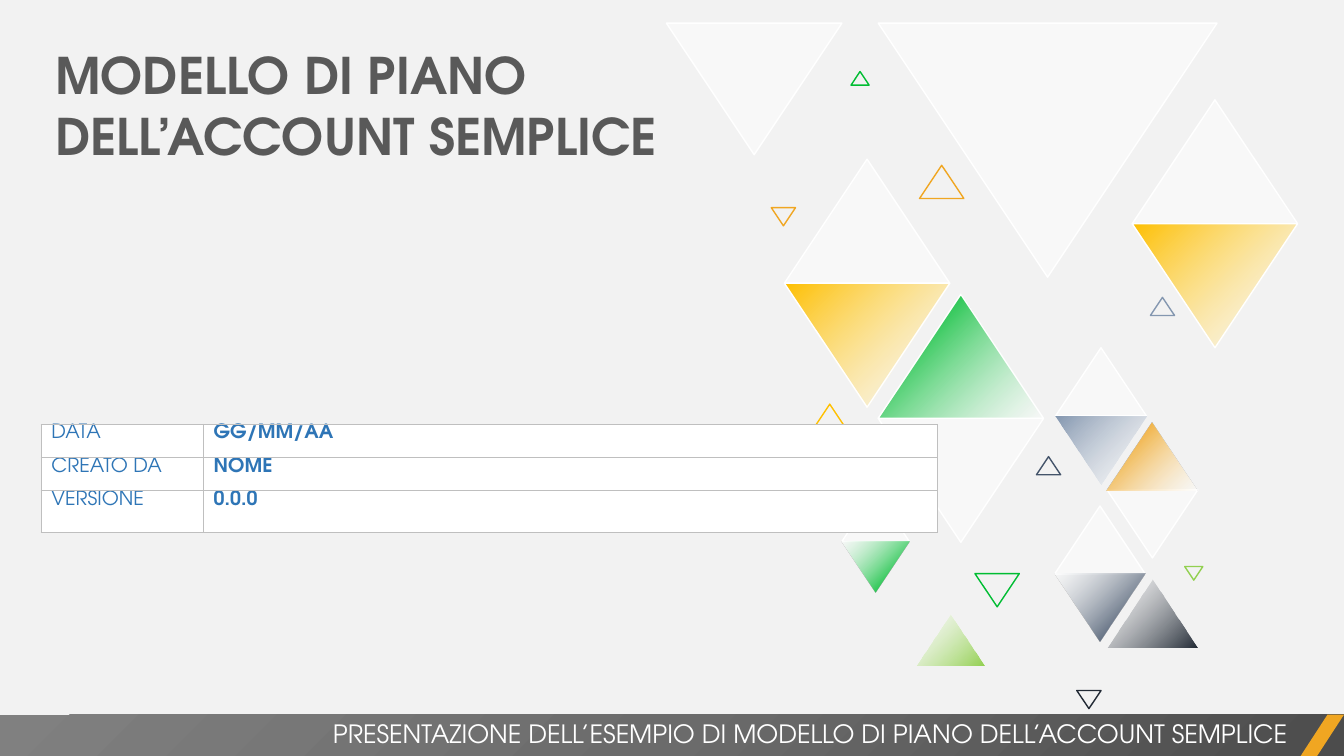
"""Build the cover slide of a simple account plan, with triangles and a details table."""
from dataclasses import dataclass

from lxml.etree import SubElement
from pptx import Presentation
from pptx.dml.color import RGBColor
from pptx.enum.shapes import MSO_SHAPE
from pptx.enum.text import PP_ALIGN
from pptx.oxml import parse_xml
from pptx.oxml.ns import nsdecls, qn
from pptx.util import Inches, Pt


@dataclass(frozen=True)
class Theme:
    font: str = "TeX Gyre Adventor"
    title_size: int = 36
    table_size: int = 14
    footer_size: int = 18
    background: str = "F2F2F2"
    white: str = "FFFFFF"
    title: str = "595959"
    table_text: str = "2E75B6"
    border: str = "BFBFBF"
    yellow: str = "FFC000"
    orange: str = "F0A622"
    green: str = "00BD32"
    lime: str = "92D050"
    steel: str = "8497B0"
    slate: str = "44546A"
    night: str = "222A35"
    footer_stops: tuple = ((0, "4C4C4C"), (50, "6B6B6B"), (100, "808080"))


THEME = Theme()
TITLE = "MODELLO DI PIANO DELL’ACCOUNT SEMPLICE"
FOOTER = "PRESENTAZIONE DELL’ESEMPIO DI MODELLO DI PIANO DELL’ACCOUNT SEMPLICE"
DETAILS = [("DATA", "GG/MM/AA"), ("CREATO DA", "NOME"), ("VERSIONE", "0.0.0")]
COLUMN_WIDTHS = (1.61, 7.28)
ROW_HEIGHTS = (0.33, 0.33, 0.41)
UP, DOWN = 0, 180
HEIGHT_RATIO = 0.75

GLASS_TRIANGLES = [
    (7.78, 1.58, 1.64, UP), (8.71, 4.15, 1.64, DOWN), (8.71, 0.23, 3.36, DOWN),
    (10.46, 5.02, 0.9, UP), (10.47, 3.45, 0.9, UP), (10.98, 4.86, 0.9, DOWN),
    (8.35, 4.87, 0.67, UP), (11.23, 0.99, 1.64, UP), (6.61, 0.23, 1.74, DOWN),
]
FADE_OUT_TRIANGLES = [
    (7.78, 2.81, 1.64, DOWN, THEME.yellow), (11.23, 2.22, 1.64, DOWN, THEME.yellow),
    (10.98, 5.75, 0.9, UP, THEME.night), (10.47, 4.13, 0.9, DOWN, THEME.steel),
    (9.09, 6.1, 0.67, UP, THEME.lime),
]
FADE_IN_TRIANGLES = [
    (8.71, 2.92, 1.64, UP, THEME.green), (10.46, 5.69, 0.9, DOWN, THEME.slate),
    (10.98, 4.19, 0.9, UP, THEME.orange), (8.35, 5.37, 0.67, DOWN, THEME.green),
]
OUTLINE_TRIANGLES = [
    (9.67, 5.69, 0.44, DOWN, THEME.green), (8.01, 4.01, 0.44, UP, THEME.yellow),
    (10.28, 4.53, 0.24, UP, THEME.slate), (10.68, 6.85, 0.24, DOWN, THEME.night),
    (7.65, 2.06, 0.24, DOWN, THEME.orange), (11.41, 2.95, 0.24, UP, THEME.steel),
    (8.44, 0.71, 0.18, UP, THEME.green), (11.75, 5.62, 0.18, DOWN, THEME.lime),
    (9.12, 1.64, 0.44, UP, THEME.orange),
]
LINED_WIDTH = 1.64
CLEAR_WHITE = (THEME.white, 50)


def color_xml(color):
    name, opacity = color if isinstance(color, tuple) else (color, 100)
    return f'<a:srgbClr val="{name}"><a:alpha val="{opacity * 1000}"/></a:srgbClr>'


def solid_xml(color):
    return f'<a:solidFill {nsdecls("a")}>{color_xml(color)}</a:solidFill>'


def gradient_xml(stops, direction='<a:lin ang="13500000" scaled="0"/>'):
    entries = "".join(
        f'<a:gs pos="{position * 1000}">{color_xml(color)}</a:gs>' for position, color in stops
    )
    return (f'<a:gradFill {nsdecls("a")} rotWithShape="1"><a:gsLst>{entries}</a:gsLst>'
            f'{direction}</a:gradFill>')


def add_plain_shape(shapes, kind, box, fill_xml=None, line=None):
    shape = shapes.add_shape(kind, *(Inches(value) for value in box))
    shape.shadow.inherit = False
    if fill_xml:
        shape._element.spPr.insert(2, parse_xml(fill_xml))
    else:
        shape.fill.background()
    if line:
        shape.line.color.rgb = RGBColor.from_string(line)
        shape.line.width = Pt(1)
    else:
        shape.line.fill.background()
    return shape


def add_triangle(shapes, left, top, width, rotation, fill_xml=None, line=None):
    box = (left, top, width, width * HEIGHT_RATIO)
    shape = add_plain_shape(shapes, MSO_SHAPE.ISOSCELES_TRIANGLE, box, fill_xml, line)
    shape.rotation = rotation


def add_triangles(slide):
    shapes = slide.shapes.add_group_shape().shapes
    for place in GLASS_TRIANGLES:
        add_triangle(shapes, *place, solid_xml(CLEAR_WHITE), THEME.white)
    fades = [(place, ((0, color), (100, CLEAR_WHITE))) for *place, color in FADE_OUT_TRIANGLES]
    fades += [(place, ((0, CLEAR_WHITE), (82, color))) for *place, color in FADE_IN_TRIANGLES]
    for place, stops in fades:
        line = THEME.white if place[2] == LINED_WIDTH else None
        add_triangle(shapes, *place, gradient_xml(stops), line)
    for *place, color in OUTLINE_TRIANGLES:
        add_triangle(shapes, *place, line=color)


def write(text_frame, text, size, color, bold=False, alignment=PP_ALIGN.LEFT):
    text_frame.word_wrap = True
    paragraph = text_frame.paragraphs[0]
    paragraph.alignment = alignment
    run = paragraph.add_run()
    run.text = text
    run.font.name = THEME.font
    run.font.size = Pt(size)
    run.font.bold = bold
    run.font.color.rgb = RGBColor.from_string(color)


def add_text(slide, box, *args, **kwargs):
    text_box = slide.shapes.add_textbox(*(Inches(value) for value in box))
    write(text_box.text_frame, *args, **kwargs)


def style_cell(cell):
    properties = cell._tc.get_or_add_tcPr()
    for side in ("lnL", "lnR", "lnT", "lnB"):
        border = SubElement(properties, qn(f"a:{side}"), w=str(Pt(1)))
        border.append(parse_xml(solid_xml(THEME.border)))
    cell.fill.solid()
    cell.fill.fore_color.rgb = RGBColor.from_string(THEME.white)
    cell.margin_top = cell.margin_bottom = 0


def add_details(slide):
    box = (0.41, 4.21, sum(COLUMN_WIDTHS), sum(ROW_HEIGHTS))
    frame = slide.shapes.add_table(
        len(DETAILS), len(COLUMN_WIDTHS), *(Inches(value) for value in box))
    table = frame.table
    table.first_row = table.horz_banding = False
    for column, width in zip(table.columns, COLUMN_WIDTHS):
        column.width = Inches(width)
    for row, height, texts in zip(table.rows, ROW_HEIGHTS, DETAILS):
        row.height = Inches(height)
        for index, (cell, text) in enumerate(zip(row.cells, texts)):
            style_cell(cell)
            write(cell.text_frame, text, THEME.table_size, THEME.table_text, bold=index == 1)


def add_footer(slide):
    corner = '<a:path path="circle"><a:fillToRect l="100000" t="100000"/></a:path>'
    add_plain_shape(slide.shapes, MSO_SHAPE.RECTANGLE, (0, 7.09, 13.33, 0.41),
                    gradient_xml(THEME.footer_stops, corner))
    accent = add_plain_shape(slide.shapes, MSO_SHAPE.PARALLELOGRAM, (12.9, 7.09, 0.43, 0.41),
                             solid_xml(THEME.orange))
    accent.adjustments[0] = 0.65
    add_text(slide, (0, 7.08, 12.87, 0.4), FOOTER, THEME.footer_size, THEME.white,
             alignment=PP_ALIGN.RIGHT)


def main():
    presentation = Presentation()
    presentation.slide_width, presentation.slide_height = Inches(13.33), Inches(7.5)
    slide = presentation.slides.add_slide(presentation.slide_layouts[6])
    slide.background.fill.solid()
    slide.background.fill.fore_color.rgb = RGBColor.from_string(THEME.background)
    add_triangles(slide)
    add_text(slide, (0.45, 0.39, 6.92, 1.31), TITLE, THEME.title_size, THEME.title, bold=True)
    add_details(slide)
    add_footer(slide)
    presentation.save("out.pptx")


if __name__ == "__main__":
    main()
